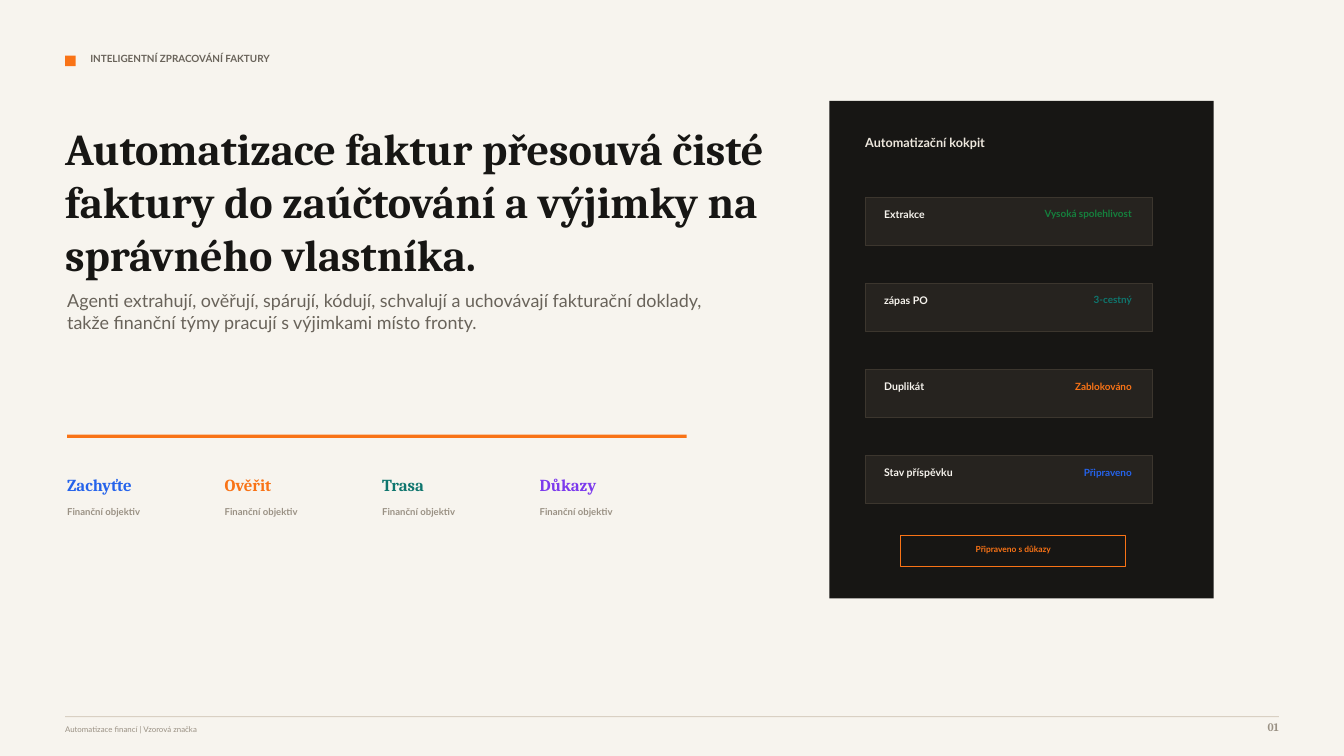
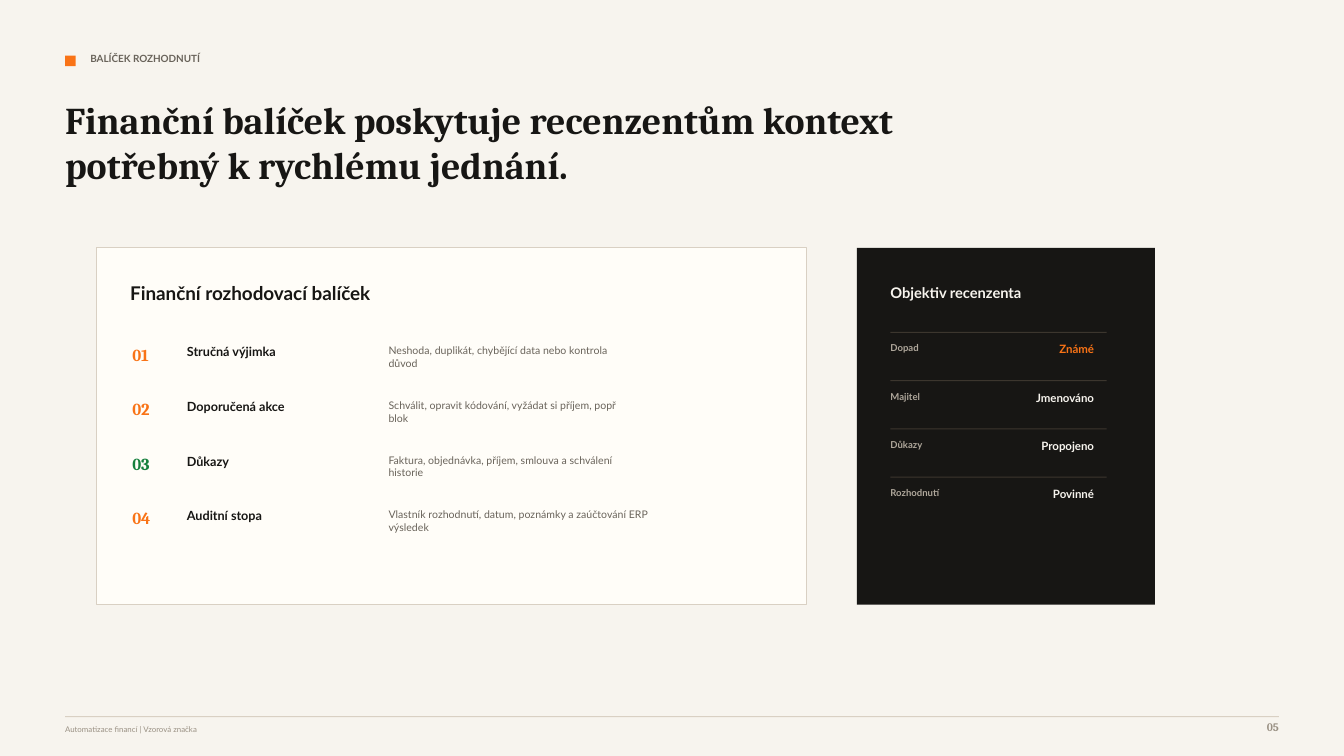
from dataclasses import dataclass

from pptx import Presentation
from pptx.dml.color import RGBColor
from pptx.enum.shapes import MSO_SHAPE
from pptx.enum.text import MSO_ANCHOR, PP_ALIGN
from pptx.util import Pt

RECTANGLE = MSO_SHAPE.RECTANGLE
TOP = MSO_ANCHOR.TOP
LEFT, CENTER, RIGHT = PP_ALIGN.LEFT, PP_ALIGN.CENTER, PP_ALIGN.RIGHT


@dataclass(frozen=True)
class Theme:
    serif: str = "Cambria"
    sans: str = "Lato"

    paper: str = "F7F4EE"
    card: str = "FFFDF8"
    ink: str = "171614"
    panel_row: str = "26231F"
    panel_line: str = "3C362E"
    panel_heading: str = "EDE7DD"
    panel_muted: str = "AFA79B"
    body: str = "69635A"
    muted: str = "9A9184"
    hairline: str = "D9D0C3"
    orange: str = "F97316"
    blue: str = "2563EB"
    teal: str = "0F766E"
    violet: str = "7C3AED"
    green: str = "15803D"

    cover_title: float = 31.5
    page_title: float = 27
    card_heading: float = 13.5
    lede: float = 12.8
    accent: float = 12
    lens_heading: float = 10.5
    heading: float = 9
    value: float = 8.2
    text: float = 7.5
    label: float = 7.1
    caption: float = 6.8
    badge: float = 6
    footer: float = 5.6


class DeckBuilder:
    margin = 46.5
    content_width = 867

    def __init__(self, theme):
        self.theme = theme
        self.deck = Presentation()
        self.deck.slide_width = Pt(960)
        self.deck.slide_height = Pt(540)
        self.page = None

    def start_page(self, kicker, number):
        theme = self.theme
        self.page = self.deck.slides.add_slide(self.deck.slide_layouts[6])
        background = self.page.background.fill
        background.solid()
        background.fore_color.rgb = RGBColor.from_string(theme.paper)
        self.block(self.margin, 39.75, 7.5, 7.5, theme.orange)
        self.text(64.5, 37.5, 420, 13.5, kicker, theme.label, theme.body)
        self.block(self.margin, 511.5, self.content_width, 0.75, theme.hairline)
        self.text(self.margin, 517.5, 570, 10.5,
                  "Automatizace financí | Vzorová značka",
                  theme.footer, theme.muted, bold=False)
        self.text(877.5, 514.5, 36, 13.5, number, theme.value, theme.muted,
                  font=theme.serif, align=RIGHT)

    def block(self, left, top, width, height, fill=None, line=None):
        shape = self.page.shapes.add_shape(
            RECTANGLE, Pt(left), Pt(top), Pt(width), Pt(height))
        shape.shadow.inherit = False
        if fill:
            shape.fill.solid()
            shape.fill.fore_color.rgb = RGBColor.from_string(fill)
        else:
            shape.fill.background()
        if line:
            shape.line.color.rgb = RGBColor.from_string(line)
            shape.line.width = Pt(0.75)
        else:
            shape.line.fill.background()

    def text(self, left, top, width, height, words, size, color,
             font=None, bold=True, align=LEFT):
        box = self.page.shapes.add_textbox(
            Pt(left), Pt(top), Pt(width), Pt(height))
        frame = box.text_frame
        frame.word_wrap = True
        frame.vertical_anchor = TOP
        frame.margin_left = frame.margin_right = 0
        frame.margin_top = frame.margin_bottom = 0
        for index, line in enumerate(words.split("\n")):
            para = frame.add_paragraph() if index else frame.paragraphs[0]
            para.alignment = align
            span = para.add_run()
            span.text = line
            span.font.name = font or self.theme.sans
            span.font.size = Pt(size)
            span.font.bold = bold
            span.font.color.rgb = RGBColor.from_string(color)

    def title(self, top, width, height, words, size):
        self.text(self.margin, top, width, height, words, size,
                  self.theme.ink, font=self.theme.serif)

    def stat(self, left, word, color):
        theme = self.theme
        self.text(left, 339, 90, 15, word, theme.accent, color, font=theme.serif)
        self.text(left, 361.5, 82.5, 12, "Finanční objektiv",
                  theme.caption, theme.muted)

    def status_row(self, top, label, status, color):
        theme = self.theme
        self.block(618, top, 205.5, 34.5, theme.panel_row, theme.panel_line)
        self.text(631.5, top + 7.5, 97.5, 12, label, theme.text, theme.paper)
        self.text(736.5, top + 7.5, 72, 12, status, theme.label, color,
                  align=RIGHT)

    def packet_row(self, top, number, name, detail, color):
        theme = self.theme
        self.text(94.5, top, 25.5, 18, number, theme.accent, color,
                  font=theme.serif)
        self.text(133.5, top, 130.5, 13.5, name, theme.heading, theme.ink)
        self.text(277.5, top, 240, 22.5, detail, theme.text, theme.body,
                  bold=False)

    def lens_row(self, top, label, value, color):
        theme = self.theme
        self.block(636, top, 154.5, 0.75, theme.panel_line)
        self.text(636, top + 7.5, 69, 12, label, theme.caption,
                  theme.panel_muted)
        self.text(720, top + 7.5, 61.5, 12, value, theme.value, color,
                  align=RIGHT)


def build_cover(builder):
    theme = builder.theme
    builder.start_page("INTELIGENTNÍ ZPRACOVÁNÍ FAKTURY", "01")
    builder.title(87, 555, 94.5,
                  "Automatizace faktur přesouvá čisté faktury do zaúčtování "
                  "a výjimky na správného vlastníka.", theme.cover_title)
    builder.text(48, 207, 465, 66,
                 "Agenti extrahují, ověřují, spárují, kódují, schvalují a "
                 "uchovávají fakturační doklady, takže finanční týmy pracují "
                 "s výjimkami místo fronty.",
                 theme.lede, theme.body, bold=False)
    builder.block(48, 310.5, 442.5, 2.25, theme.orange)
    stats = [("Zachyťte", theme.blue), ("Ověřit", theme.orange),
             ("Trasa", theme.teal), ("Důkazy", theme.violet)]
    for index, (word, color) in enumerate(stats):
        builder.stat(48 + 112.5 * index, word, color)

    builder.block(592.5, 72, 274.5, 355.5, theme.ink)
    builder.text(618, 96, 165, 18, "Automatizační kokpit",
                 theme.heading, theme.panel_heading)
    statuses = [("Extrakce", "Vysoká spolehlivost", theme.green),
                ("zápas PO", "3-cestný", theme.teal),
                ("Duplikát", "Zablokováno", theme.orange),
                ("Stav příspěvku", "Připraveno", theme.blue)]
    for index, row in enumerate(statuses):
        builder.status_row(141 + 61.5 * index, *row)
    builder.block(643.5, 382.5, 160.5, 22.5, line=theme.orange)
    builder.text(652.5, 388.5, 142.5, 10.5, "Připraveno s důkazy",
                 theme.badge, theme.orange, align=CENTER)


def build_decision_packet(builder):
    theme = builder.theme
    builder.start_page("BALÍČEK ROZHODNUTÍ", "05")
    builder.title(69, 675, 73.5,
                  "Finanční balíček poskytuje recenzentům kontext potřebný "
                  "k rychlému jednání.", theme.page_title)

    builder.block(69, 177, 507, 255, theme.card, theme.hairline)
    builder.text(93, 201, 225, 18, "Finanční rozhodovací balíček",
                 theme.card_heading, theme.ink)
    packet = [
        ("01", "Stručná výjimka",
         "Neshoda, duplikát, chybějící data nebo kontrola\ndůvod",
         theme.orange),
        ("02", "Doporučená akce",
         "Schválit, opravit kódování, vyžádat si příjem, popř\nblok",
         theme.orange),
        ("03", "Důkazy",
         "Faktura, objednávka, příjem, smlouva a schválení\nhistorie",
         theme.green),
        ("04", "Auditní stopa",
         "Vlastník rozhodnutí, datum, poznámky a zaúčtování ERP\nvýsledek",
         theme.orange),
    ]
    for index, row in enumerate(packet):
        builder.packet_row(246 + 39 * index, *row)

    builder.block(612, 177, 213, 255, theme.ink)
    builder.text(636, 202.5, 120, 15, "Objektiv recenzenta",
                 theme.lens_heading, theme.paper)
    lens = [("Dopad", "Známé", theme.orange),
            ("Majitel", "Jmenováno", theme.paper),
            ("Důkazy", "Propojeno", theme.paper),
            ("Rozhodnutí", "Povinné", theme.paper)]
    for index, row in enumerate(lens):
        builder.lens_row(237 + 34.5 * index, *row)


def main():
    builder = DeckBuilder(Theme())
    build_cover(builder)
    build_decision_packet(builder)
    builder.deck.save("out.pptx")


if __name__ == "__main__":
    main()
